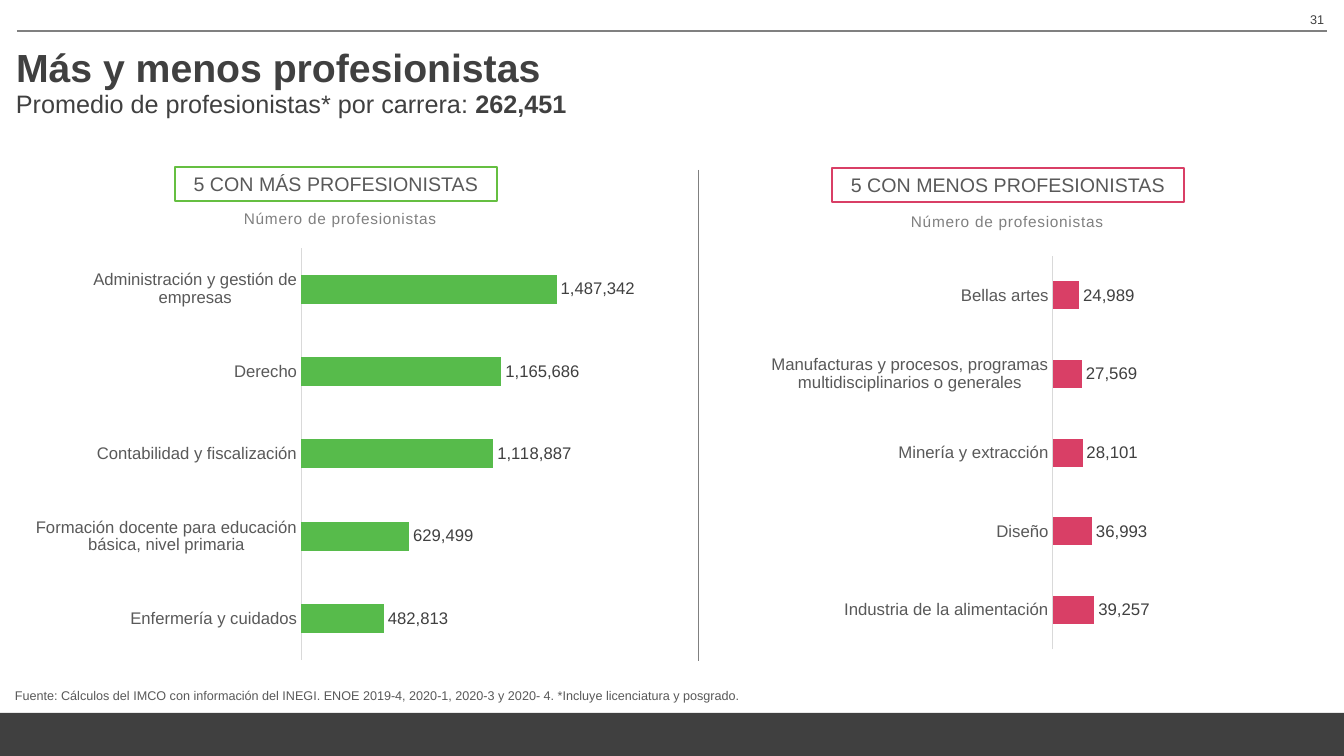
from pptx import Presentation
from pptx.chart.data import CategoryChartData
from pptx.dml.color import RGBColor
from pptx.enum.chart import XL_CHART_TYPE, XL_LABEL_POSITION, XL_TICK_LABEL_POSITION, XL_TICK_MARK
from pptx.enum.shapes import MSO_CONNECTOR, MSO_SHAPE
from pptx.enum.text import MSO_ANCHOR, MSO_AUTO_SIZE, PP_ALIGN
from pptx.oxml import parse_xml
from pptx.oxml.ns import nsdecls, qn
from pptx.util import Emu, Pt

PX = 914400 / 100.8
FONT = "Arial"
COLORS = {
    "dark": "404040", "text": "595959", "muted": "808080", "axis": "D9D9D9",
    "black": "000000", "badge_green": "65BF41", "green": "57BB4B", "pink": "D93F66",
}

MOST = {
    "badge": "5 CON MÁS PROFESIONISTAS", "badge_box": (151, 0, 322, 34),
    "badge_color": "badge_green", "badge_line": 2, "unit_box": (210, 37, 215, 29),
    "chart_top": 72, "color": "green", "reverse": True, "maximum": 1600000,
    "plot": (0.457, 0.021, 0.454, 0.96),
    "rows": [
        ("Administración y gestión de empresas", 1487342),
        ("Derecho", 1165686),
        ("Contabilidad y fiscalización", 1118887),
        ("Formación docente para educación básica, nivel primaria", 629499),
        ("Enfermería y cuidados", 482813),
    ],
}
LEAST = {
    "badge": "5 CON MENOS PROFESIONISTAS", "badge_box": (80, 0, 352, 34),
    "badge_color": "pink", "badge_line": 1.75, "unit_box": (149, 39, 215, 29),
    "chart_top": 70, "color": "pink", "reverse": False, "maximum": 45000,
    "plot": (0.464, 0.042, 0.074, 0.915),
    "rows": [
        ("Industria de la alimentación", 39257),
        ("Diseño", 36993),
        ("Minería y extracción", 28101),
        ("Manufacturas y procesos, programas multidisciplinarios o generales", 27569),
        ("Bellas artes", 24989),
    ],
}


def px(*lengths):
    return [Emu(round(length * PX)) for length in lengths]


def color(name):
    return RGBColor.from_string(COLORS[name])


def style(font, size, name):
    font.name = FONT
    font.size = Pt(size)
    font.color.rgb = color(name)


def write(shape, runs, size, name, align=PP_ALIGN.LEFT, anchor=MSO_ANCHOR.TOP, wrap=True, spacing=None):
    frame = shape.text_frame
    frame.auto_size = MSO_AUTO_SIZE.NONE
    frame.word_wrap = wrap
    frame.vertical_anchor = anchor
    para = frame.paragraphs[0]
    para.alignment = align
    for text, bold in runs:
        span = para.add_run()
        span.text = text
        style(span.font, size, name)
        span.font.bold = bold
        if spacing:
            span._r.get_or_add_rPr().set("spc", str(spacing))


def add_text(page, box, runs, size, name, **options):
    write(page.shapes.add_textbox(*px(*box)), runs, size, name, **options)


def add_rule(page, x1, y1, x2, y2):
    rule = page.shapes.add_connector(MSO_CONNECTOR.STRAIGHT, *px(x1, y1, x2, y2))
    rule.line.color.rgb = color("muted")
    rule.line.width = Pt(0.75)
    rule._element.spPr.append(parse_xml(f"<a:effectLst {nsdecls('a')}/>"))


def place_plot(chart, fractions):
    area = chart._chartSpace.find(".//" + qn("c:plotArea"))
    for layout in area.findall(qn("c:layout")):
        area.remove(layout)
    sizes = "".join(f'<c:{key} val="{value}"/>' for key, value in zip("xywh", fractions))
    area.insert(0, parse_xml(
        f'<c:layout {nsdecls("c")}><c:manualLayout><c:layoutTarget val="inner"/>'
        f'<c:xMode val="edge"/><c:yMode val="edge"/>{sizes}</c:manualLayout></c:layout>'))


def add_bars(page, box, panel):
    data = CategoryChartData(number_format="#,##0")
    data.categories = [label for label, value in panel["rows"]]
    data.add_series("Series 1", [value for label, value in panel["rows"]])
    chart = page.shapes.add_chart(XL_CHART_TYPE.BAR_CLUSTERED, *px(*box), data).chart
    style(chart.font, 10, "black")
    chart.has_legend = False
    chart.has_title = False
    place_plot(chart, panel["plot"])

    careers = chart.category_axis
    careers.reverse_order = panel["reverse"]
    careers.major_tick_mark = XL_TICK_MARK.NONE
    careers.minor_tick_mark = XL_TICK_MARK.NONE
    careers.tick_label_position = XL_TICK_LABEL_POSITION.NEXT_TO_AXIS
    careers.format.line.color.rgb = color("axis")
    careers.format.line.width = Pt(0.75)
    style(careers.tick_labels.font, 12, "text")

    amounts = chart.value_axis
    amounts.visible = False
    amounts.has_major_gridlines = False
    amounts.minimum_scale = 0
    amounts.maximum_scale = panel["maximum"]

    plot = chart.plots[0]
    plot.gap_width = 182
    plot.vary_by_categories = False
    bars = plot.series[0]
    bars.format.fill.solid()
    bars.format.fill.fore_color.rgb = color(panel["color"])
    labels = bars.data_labels
    labels.show_value = True
    labels.position = XL_LABEL_POSITION.OUTSIDE_END
    labels.number_format = "#,##0"
    labels.number_format_is_linked = False
    style(labels.font, 12, "dark")


def add_panel(page, box, panel):
    left, top, width, height = box

    def inside(part):
        x, y, w, h = part
        return left + x, top + y, w, h

    badge = page.shapes.add_shape(MSO_SHAPE.RECTANGLE, *px(*inside(panel["badge_box"])))
    badge.shadow.inherit = False
    badge.fill.background()
    badge.line.color.rgb = color(panel["badge_color"])
    badge.line.width = Pt(panel["badge_line"])
    write(badge, [(panel["badge"], False)], 14, "text", align=PP_ALIGN.CENTER, anchor=MSO_ANCHOR.MIDDLE)
    add_text(page, inside(panel["unit_box"]), [("Número de profesionistas", False)], 11, "muted",
             wrap=False, spacing=50)
    chart_top = panel["chart_top"]
    add_bars(page, inside((0, chart_top, width, height - chart_top)), panel)


def add_header(page, box):
    left, top, width, height = box
    add_rule(page, left + 17, top + 31, left + width - 17, top + 31)
    add_text(page, (left + width - 312, top + 7, 302, 40), [("31", False)], 9, "dark", align=PP_ALIGN.RIGHT)
    title = page.shapes.title
    title.left, title.top, title.width, title.height = px(left + 6, top + 36, width - 15, 61)
    write(title, [("Más y menos profesionistas", True)], 28, "dark", anchor=MSO_ANCHOR.MIDDLE)
    add_text(page, (left + 6, top + 83, 953, 40),
             [("Promedio de profesionistas* por carrera: ", False), ("262,451", True)], 18, "dark")


def add_footer(page, box):
    left, top, width, height = box
    band = page.shapes.add_shape(MSO_SHAPE.RECTANGLE, *px(left, top + 32, width, height - 32))
    band.shadow.inherit = False
    band.fill.solid()
    band.fill.fore_color.rgb = color("dark")
    band.line.fill.background()
    source = ("Fuente: Cálculos del IMCO con información del INEGI. ENOE 2019-4, 2020-1, 2020-3 y 2020- 4. "
              "*Incluye licenciatura y posgrado.")
    add_text(page, (left + 5, top, 1309, 27), [(source, False)], 9, "text", anchor=MSO_ANCHOR.BOTTOM)


def main():
    deck = Presentation()
    deck.slide_width, deck.slide_height = px(1344, 756)
    page = deck.slides.add_slide(deck.slide_layouts[5])
    add_header(page, (0, 0, 1344, 123))
    add_panel(page, (24, 167, 611, 501), MOST)
    add_rule(page, 699, 170, 699, 661)
    add_panel(page, (752, 168, 648, 500), LEAST)
    add_footer(page, (0, 681, 1344, 75))
    deck.save("out.pptx")


if __name__ == "__main__":
    main()
